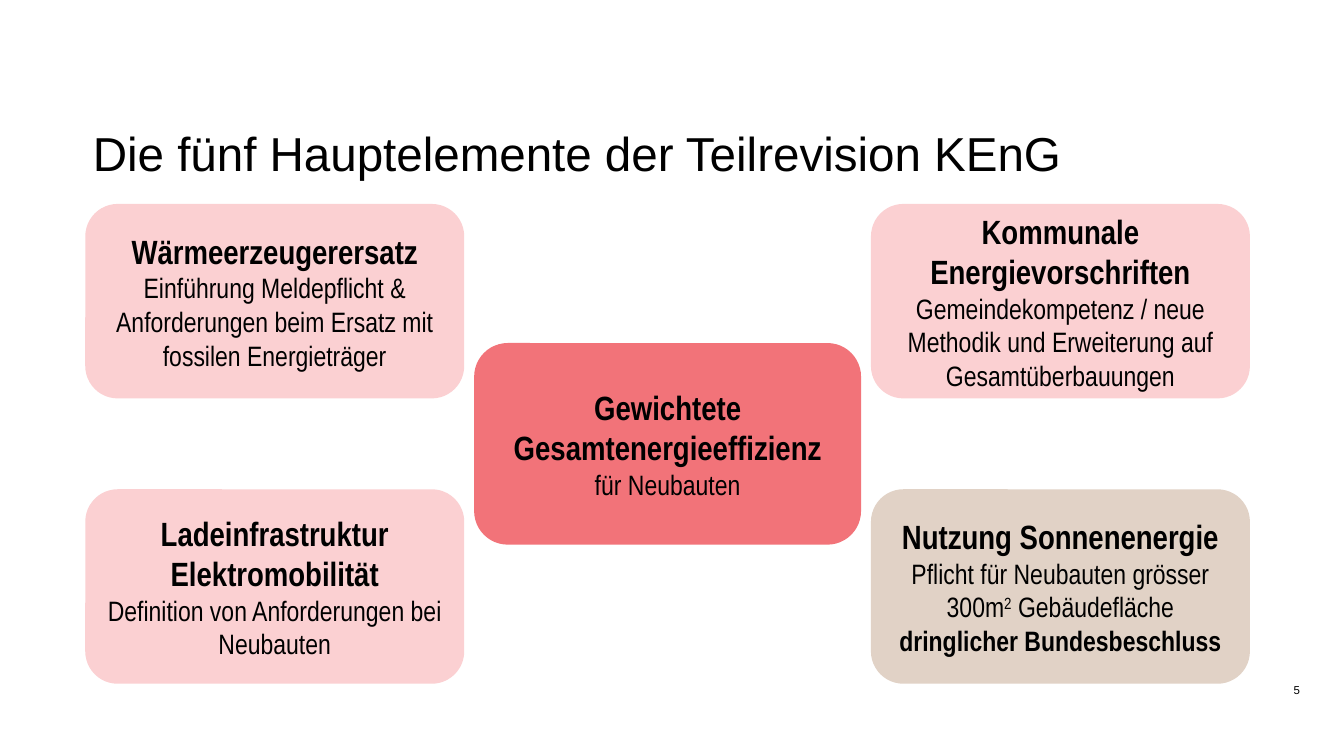
from dataclasses import dataclass

from pptx import Presentation
from pptx import util as u
from pptx.dml.color import RGBColor
from pptx.enum import shapes, text


@dataclass(frozen=True)
class Theme:
    """Colours, fonts and type sizes of the slide."""
    ink: str = "000000"
    core: str = "F27379"
    element: str = "FBD0D2"
    federal: str = "E1D2C6"
    title_font: str = "Arial"
    box_font: str = "Arial Narrow"
    title_size: float = 34
    heading_size: float = 24
    detail_size: float = 20
    number_size: float = 8.2


THEME = Theme()
CENTER = text.PP_ALIGN.CENTER


def write(paragraph, words, font=THEME.box_font, size=THEME.detail_size,
          bold=False, raised=False, align=CENTER):
    """Add formatted words to a paragraph."""
    run = paragraph.add_run()
    run.text = words
    run.font.name = font
    run.font.size = u.Pt(size)
    run.font.bold = bold
    run.font.color.rgb = RGBColor.from_string(THEME.ink)
    if raised:
        run.font._element.set("baseline", "30000")
    paragraph.alignment = align


def clear_margins(frame):
    """Let the text fill its frame to the edges."""
    frame.margin_left = frame.margin_right = 0
    frame.margin_top = frame.margin_bottom = 0
    frame.word_wrap = True


def place_title(slide, words, left, top, width, height):
    """Position and format the slide title."""
    title = slide.shapes.title
    title.left, title.top, title.width, title.height = left, top, width, height
    frame = title.text_frame
    clear_margins(frame)
    frame.vertical_anchor = text.MSO_ANCHOR.TOP
    heading = frame.paragraphs[0]
    heading.line_spacing = 1.1
    write(heading, words, font=THEME.title_font, size=THEME.title_size,
          align=text.PP_ALIGN.LEFT)


def place_page_number(slide, number, left, top, width, height):
    """Place the page number in the lower right corner."""
    frame = slide.shapes.add_textbox(left, top, width, height).text_frame
    clear_margins(frame)
    write(frame.paragraphs[0], number, font=THEME.title_font,
          size=THEME.number_size, align=text.PP_ALIGN.RIGHT)


def place_element(slide, heading, detail, fill, left, top, width, height):
    """Draw one rounded element and return its detail paragraph."""
    element = slide.shapes.add_shape(
        shapes.MSO_SHAPE.ROUNDED_RECTANGLE, left, top, width, height)
    element.shadow.inherit = False
    element.fill.solid()
    element.fill.fore_color.rgb = RGBColor.from_string(fill)
    element.line.fill.background()
    frame = element.text_frame
    frame.word_wrap = True
    frame.vertical_anchor = text.MSO_ANCHOR.MIDDLE
    write(frame.paragraphs[0], heading, size=THEME.heading_size, bold=True)
    description = frame.add_paragraph()
    write(description, detail)
    return description


def place_elements(slide, left, top, width, height):
    """Arrange four elements in the corners of a box around the core one."""
    element_width, element_height = u.Cm(9.55), u.Cm(4.9)
    core_width, core_height = u.Cm(9.75), u.Cm(5.08)
    right = left + width - element_width
    bottom = top + height - element_height
    place_element(slide, "Gewichtete Gesamtenergieeffizienz", "für Neubauten",
                  THEME.core, left + (width - core_width) // 2,
                  top + (height - core_height) // 2, core_width, core_height)
    corners = [
        ("Wärmeerzeugerersatz",
         "Einführung Meldepflicht & Anforderungen beim Ersatz mit fossilen Energieträger",
         THEME.element, left, top),
        ("Kommunale Energievorschriften",
         "Gemeindekompetenz / neue Methodik und Erweiterung auf Gesamtüberbauungen",
         THEME.element, right, top),
        ("Ladeinfrastruktur Elektromobilität",
         "Definition von Anforderungen bei Neubauten",
         THEME.element, left, bottom),
        ("Nutzung Sonnenenergie",
         "Pflicht für Neubauten grösser 300m",
         THEME.federal, right, bottom),
    ]
    for corner in corners:
        description = place_element(slide, *corner, element_width, element_height)
    solar_duty = description
    write(solar_duty, "2", raised=True)
    write(solar_duty, " Gebäudefläche")
    solar_duty.add_line_break()
    write(solar_duty, "dringlicher Bundesbeschluss", bold=True)


def main():
    """Build and save the slide."""
    deck = Presentation()
    deck.slide_width, deck.slide_height = u.Cm(33.87), u.Cm(19.05)
    slide = deck.slides.add_slide(deck.slide_layouts[5])
    place_title(slide, "Die fünf Hauptelemente der Teilrevision KEnG",
                u.Cm(2.34), u.Cm(2.97), u.Cm(30.5), u.Cm(1.73))
    place_elements(slide, u.Cm(2.15), u.Cm(5.14), u.Cm(29.35), u.Cm(12.09))
    place_page_number(slide, "5", u.Cm(31.95), u.Cm(17.22), u.Cm(0.81), u.Cm(0.3))
    deck.save("out.pptx")


if __name__ == "__main__":
    main()
